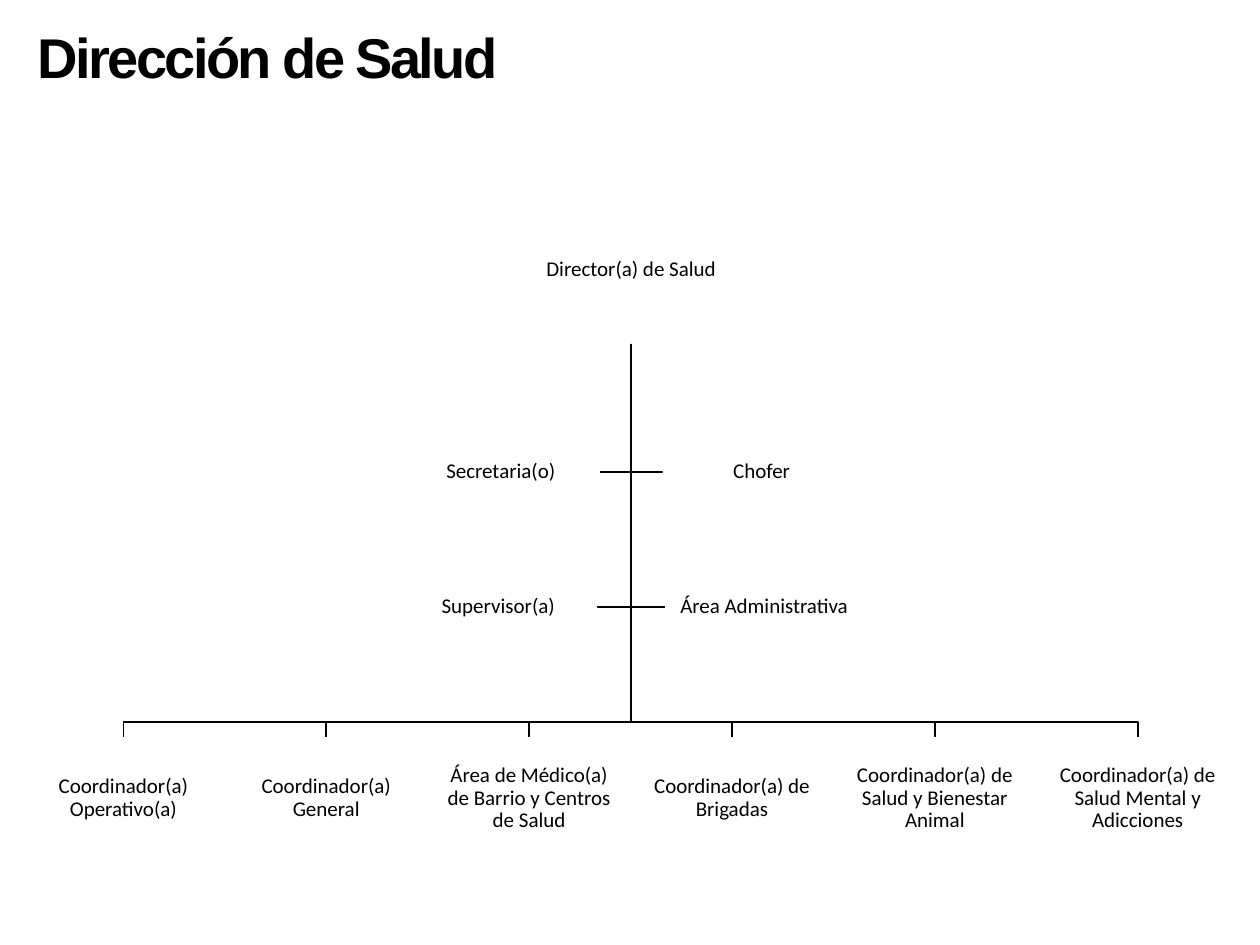
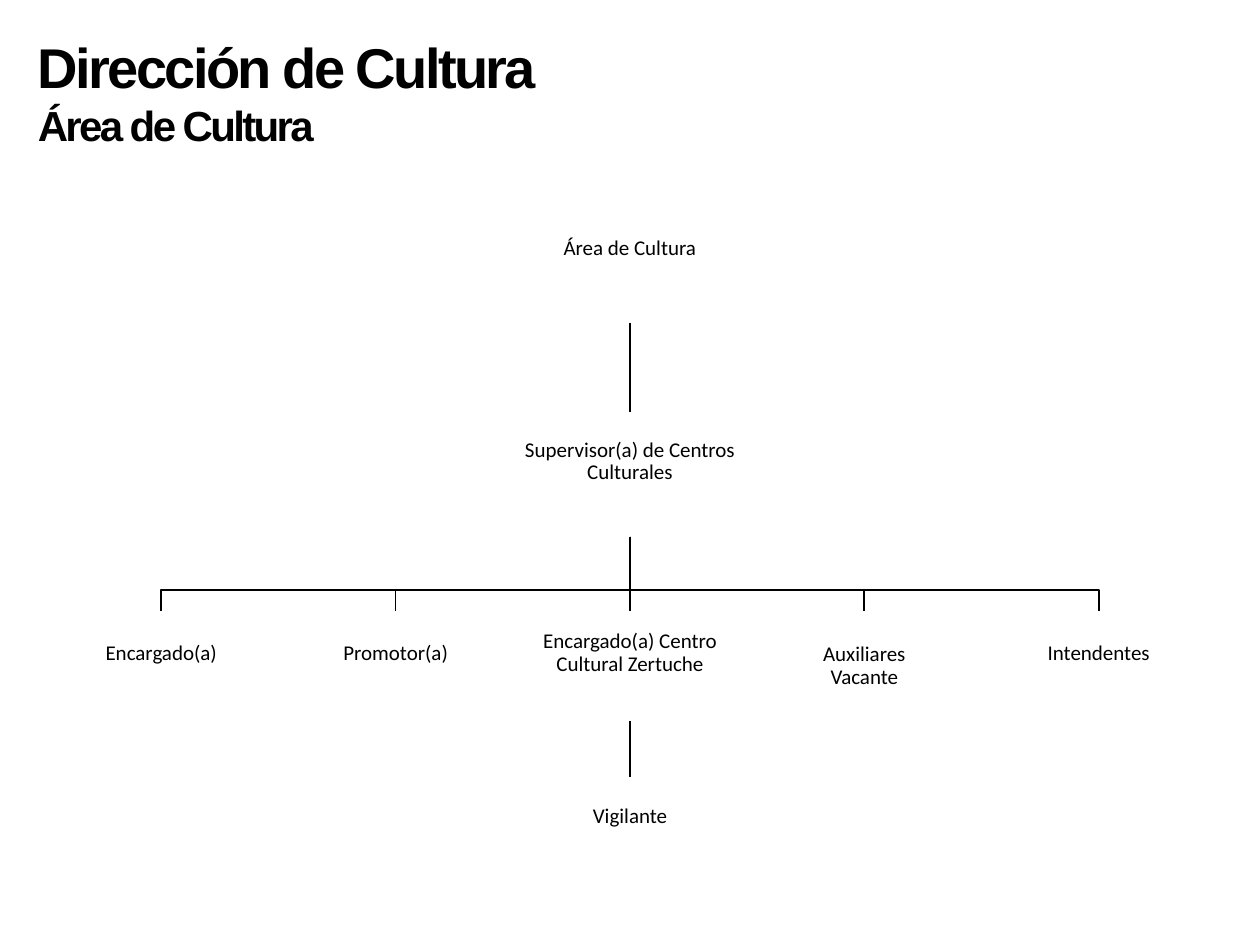
from collections import namedtuple

from lxml.etree import SubElement
from pptx import Presentation
from pptx.dml.color import RGBColor
from pptx.enum.shapes import MSO_CONNECTOR, MSO_SHAPE
from pptx.enum.text import MSO_ANCHOR, MSO_AUTO_SIZE, PP_ALIGN
from pptx.oxml.ns import qn
from pptx.util import Inches, Pt

BLACK = RGBColor(0, 0, 0)
WHITE = RGBColor(255, 255, 255)
TITLE_FONT, BODY_FONT = "Arial", "Calibri"
TITLE_SIZES = (32, 24)
INSET = 0.01
LIFT = 0.21  # bottom inset that raises a label by half a line

Box = namedtuple("Box", "left top width height")


def middle(box):
    return box.left + box.width / 2


def bottom(box):
    return box.top + box.height


def spread(first, count, pitch):
    """Return a row of equal boxes, one pitch apart."""
    return [first._replace(left=first.left + i * pitch) for i in range(count)]


def add_title(slide, box, lines):
    title = slide.shapes.title
    title.left, title.top, title.width, title.height = map(Inches, box)
    frame = title.text_frame
    frame.text = "\n".join(lines)
    frame.auto_size = MSO_AUTO_SIZE.NONE
    frame.vertical_anchor = MSO_ANCHOR.TOP
    for para, size in zip(frame.paragraphs, TITLE_SIZES):
        para.alignment = PP_ALIGN.LEFT
        font = para.font
        font.name, font.size, font.bold = TITLE_FONT, Pt(size), True
        font.color.rgb = BLACK
        for run in para.runs:
            run._r.get_or_add_rPr().set("spc", "-150")


def add_post(slide, box, label, base=INSET):
    """Draw one post of the chart; base is its bottom inset."""
    post = slide.shapes.add_shape(MSO_SHAPE.RECTANGLE, *map(Inches, box))
    post.shadow.inherit = False
    post.fill.solid()
    post.fill.fore_color.rgb = WHITE
    post.line.fill.background()
    frame = post.text_frame
    frame.word_wrap = True
    frame.vertical_anchor = MSO_ANCHOR.MIDDLE
    frame.margin_left = frame.margin_right = frame.margin_top = Inches(INSET)
    frame.margin_bottom = Inches(base)
    para = frame.paragraphs[0]
    para.text = label
    para.alignment = PP_ALIGN.CENTER
    para.line_spacing = 0.9
    para.font.name, para.font.size = BODY_FONT, Pt(12)
    para.font.color.rgb = BLACK


def add_wire(slide, *points):
    """Join the points: a connector for two, an open bent line for more."""
    spots = [(Inches(x), Inches(y)) for x, y in points]
    if len(spots) == 2:
        wire = slide.shapes.add_connector(MSO_CONNECTOR.STRAIGHT, *spots[0], *spots[1])
        SubElement(wire._element.spPr, qn("a:effectLst"))
    else:
        path = slide.shapes.build_freeform(*spots[0])
        path.add_line_segments(spots[1:], close=False)
        wire = path.convert_to_shape()
        wire.shadow.inherit = False
        wire.fill.background()
    wire.line.color.rgb = BLACK
    wire.line.width = Pt(1)


def add_row(slide, boss, boxes, labels, bus, base=INSET):
    """Hang a row of posts below boss from a line at height bus."""
    x, y = middle(boss), bottom(boss)
    for box, label in zip(boxes, labels):
        end = middle(box)
        if abs(end - x) < 0.01:
            add_wire(slide, (x, y), (x, box.top))
        else:
            add_wire(slide, (x, y), (x, bus), (end, bus), (end, box.top))
        add_post(slide, box, label, INSET if "\v" in label else base)


def add_pair(slide, boss, top, gap, labels):
    """Set two aides beside the line that comes down from boss."""
    wide, high = 1.57, 0.79
    x, y = middle(boss), top + high / 2
    for side, label in zip((-1, 1), labels):
        edge = x + side * gap
        add_wire(slide, (x, bottom(boss)), (x, y), (edge, y))
        left = edge - wide if side < 0 else edge
        add_post(slide, Box(left, top, wide, high), label)


def add_health(slide):
    add_title(slide, Box(0.2, 0.13, 7.64, 0.64), ["Dirección de Salud"])
    head = Box(3.63, 1.55, 2.76, 1.18)
    add_post(slide, head, "Director(a) de Salud")
    add_pair(slide, head, 3.35, 0.25, ["Secretaria(o)", "Chofer"])
    add_pair(slide, head, 4.42, 0.27, ["Supervisor(a)", "Área Administrativa"])
    posts = [
        "Coordinador(a) Operativo(a)",
        "Coordinador(a) General",
        "Área de Médico(a) de Barrio y Centros de Salud",
        "Coordinador(a) de Brigadas",
        "Coordinador(a) de Salud y Bienestar Animal",
        "Coordinador(a) de Salud Mental y Adicciones",
    ]
    boxes = spread(Box(0.3, 5.85, 1.36, 0.97), len(posts), 1.61)
    add_row(slide, head, boxes, posts, 5.73)


def add_culture(slide):
    add_title(slide, Box(0.2, 0.21, 7.95, 1.04),
              ["Dirección de Cultura", "Área de Cultura"])
    head = Box(3.78, 1.38, 2.44, 1.18)
    chief = Box(4.04, 3.27, 1.92, 0.99)
    add_post(slide, head, "Área de Cultura")
    add_row(slide, head, [chief], ["Supervisor(a) de Centros Culturales"], 3, LIFT)
    posts = [
        "Encargado(a)",
        "Promotor(a)",
        "Encargado(a) Centro Cultural Zertuche",
        "Auxiliares\vVacante",
        "Intendentes",
    ]
    boxes = spread(Box(0.52, 4.85, 1.52, 0.87), len(posts), 1.86)
    add_row(slide, chief, boxes, posts, 4.68, LIFT)
    guard = boxes[2]._replace(top=6.17)
    add_row(slide, boxes[2], [guard], ["Vigilante"], 6, LIFT + 0.04)


def main():
    deck = Presentation()
    deck.slide_width, deck.slide_height = Inches(10), Inches(7.5)
    for build in (add_health, add_culture):
        build(deck.slides.add_slide(deck.slide_layouts[5]))
    deck.save("out.pptx")


if __name__ == "__main__":
    main()
